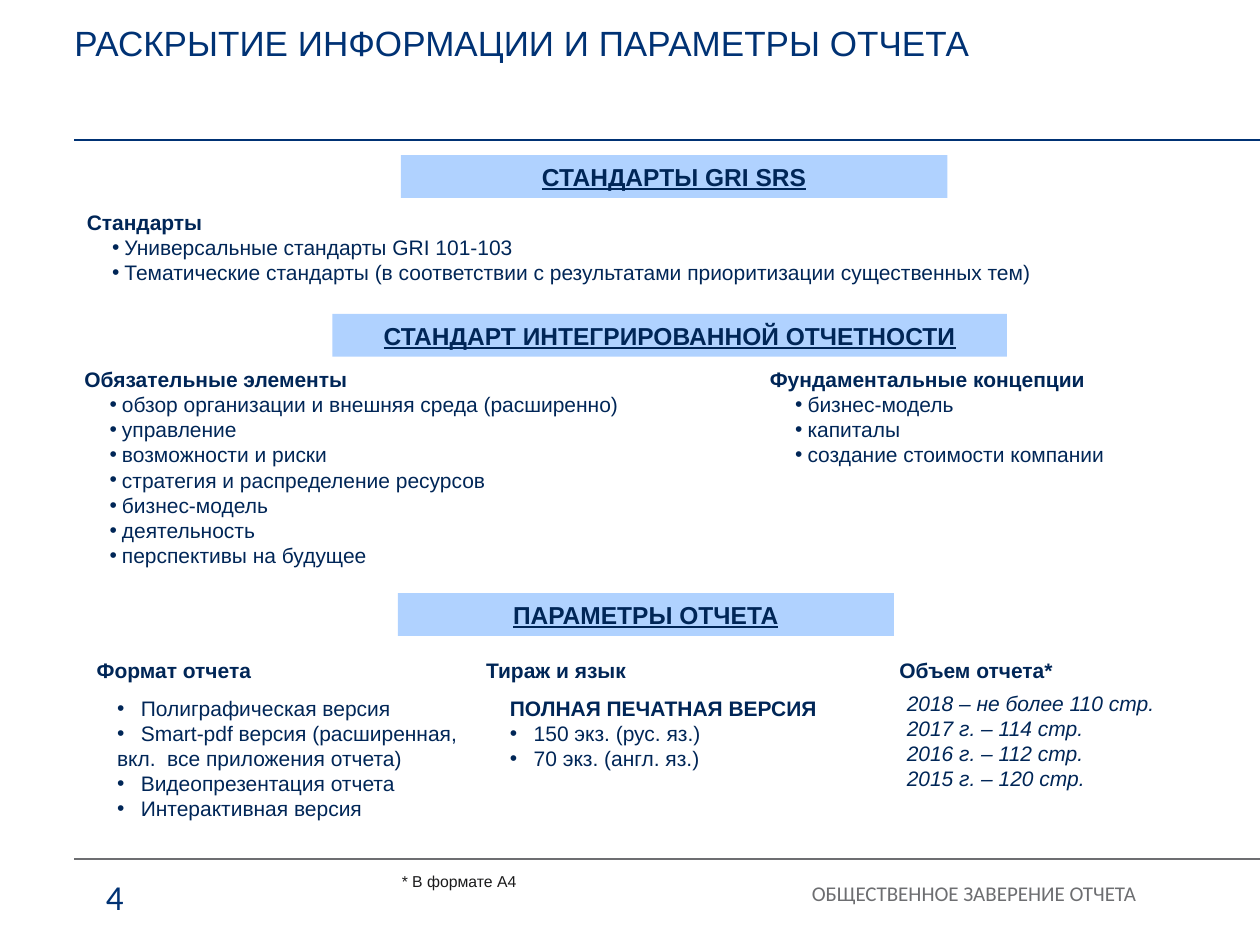
from lxml.etree import SubElement
from pptx import Presentation
from pptx.dml.color import RGBColor
from pptx.enum.shapes import MSO_CONNECTOR, MSO_SHAPE
from pptx.enum.text import MSO_ANCHOR, PP_ALIGN
from pptx.oxml.ns import qn
from pptx.util import Cm, Pt

THEME = {
    "navy": RGBColor.from_string("003274"),
    "ink": RGBColor.from_string("002657"),
    "gray": RGBColor.from_string("6D6E71"),
    "black": RGBColor.from_string("1B1B1C"),
    "band": RGBColor.from_string("B0D2FF"),
    "title": Pt(20),
    "heading": Pt(14),
    "body": Pt(12),
    "note": Pt(9),
}
BODY = {"name": "Arial", "size": THEME["body"]}
BOLD = {**BODY, "bold": True}
ITALIC = {**BODY, "italic": True}
HEADING = {**BOLD, "size": THEME["heading"], "underline": True}
TITLE = {"name": "Arial", "size": THEME["title"]}
PAGE = {"name": "Calibri", "size": THEME["title"]}
FOOTER = {"name": "Calibri", "size": THEME["body"]}
NOTE = {"name": "Arial", "size": THEME["note"]}
NARROW = (0.76, 0.25)
WIDE = (0.48, 0.48)


def write(paragraph, text, style, color="ink", align=PP_ALIGN.JUSTIFY, indent=None):
    paragraph.alignment = align
    if indent:
        margin, hanging = indent
        properties = paragraph._p.get_or_add_pPr()
        properties.set("marL", str(Cm(margin)))
        properties.set("indent", str(-Cm(hanging)))
        SubElement(properties, qn("a:buFont"), typeface="Arial")
        SubElement(properties, qn("a:buChar"), char="•")
    run = paragraph.add_run()
    run.text = text
    for attribute, value in style.items():
        setattr(run.font, attribute, value)
    run.font.color.rgb = THEME[color]


def text_area(left, top, width, height, insets=None):
    box = slide.shapes.add_textbox(Cm(left), Cm(top), Cm(width), Cm(height))
    frame = box.text_frame
    frame.word_wrap = True
    if insets:
        side, edge = insets
        frame.margin_left = frame.margin_right = Cm(side)
        frame.margin_top = frame.margin_bottom = Cm(edge)
    return frame


presentation = Presentation()
presentation.slide_width = Cm(25.4)
presentation.slide_height = Cm(19.05)
slide = presentation.slides.add_slide(presentation.slide_layouts[6])

for rule_top, color, weight in ((2.82, "navy", 1.5), (17.32, "gray", 1)):
    rule = slide.shapes.add_connector(
        MSO_CONNECTOR.STRAIGHT, Cm(1.5), Cm(rule_top), Cm(25.4), Cm(rule_top)
    )
    rule.line.color.rgb = THEME[color]
    rule.line.width = Pt(weight)
    SubElement(rule._element.spPr, qn("a:effectLst"))

title = text_area(1.5, 0.33, 22.86, 2.39, (0, 0.1))
write(title.paragraphs[0], "РАСКРЫТИЕ ИНФОРМАЦИИ И ПАРАМЕТРЫ ОТЧЕТА", TITLE, "navy", PP_ALIGN.LEFT)

sections = (
    ("СТАНДАРТЫ GRI SRS", 8.08, 3.13, 11.02),
    ("СТАНДАРТ ИНТЕГРИРОВАННОЙ ОТЧЕТНОСТИ", 6.7, 6.33, 13.6),
    ("ПАРАМЕТРЫ ОТЧЕТА", 8.02, 11.96, 10),
)
for heading, left, top, width in sections:
    band = slide.shapes.add_shape(
        MSO_SHAPE.RECTANGLE, Cm(left), Cm(top), Cm(width), Cm(0.86)
    )
    band.shadow.inherit = False
    band.fill.solid()
    band.fill.fore_color.rgb = THEME["band"]
    band.line.fill.background()
    band.text_frame.vertical_anchor = MSO_ANCHOR.MIDDLE
    write(band.text_frame.paragraphs[0], heading, HEADING, align=PP_ALIGN.CENTER)

standards = (
    ("Стандарты", BOLD, None),
    ("Универсальные стандарты GRI 101-103", BODY, NARROW),
    (
        "Тематические стандарты (в соответствии с результатами приоритизации существенных тем)",
        BODY,
        NARROW,
    ),
)
elements = (
    ("Обязательные элементы", BOLD, None),
    ("обзор организации и внешняя среда (расширенно)", BODY, NARROW),
    ("управление", BODY, NARROW),
    ("возможности и риски", BODY, NARROW),
    ("стратегия и распределение ресурсов", BODY, NARROW),
    ("бизнес-модель", BODY, NARROW),
    ("деятельность", BODY, NARROW),
    ("перспективы на будущее", BODY, NARROW),
)
concepts = (
    ("Фундаментальные концепции", BOLD, None),
    ("бизнес-модель", BODY, NARROW),
    ("капиталы", BODY, NARROW),
    ("создание стоимости компании", BODY, NARROW),
)
formats = (
    ("Полиграфическая версия", BODY, WIDE),
    ("Smart-pdf версия (расширенная,", BODY, WIDE),
    ("вкл.  все приложения отчета)", BODY, None),
    ("Видеопрезентация отчета", BODY, WIDE),
    ("Интерактивная версия", BODY, WIDE),
)
print_run = (
    ("ПОЛНАЯ ПЕЧАТНАЯ ВЕРСИЯ", BOLD, None),
    ("150 экз. (рус. яз.)", BODY, WIDE),
    ("70 экз. (англ. яз.)", BODY, WIDE),
)
volumes = (
    ("2018 – не более 110 стр.", ITALIC, None),
    ("2017 г. – 114 стр.", ITALIC, None),
    ("2016 г. – 112 стр.", ITALIC, None),
    ("2015 г. – 120 стр.", ITALIC, None),
)
blocks = (
    (standards, 1.5, 4.09, 22.86, 1.8),
    (elements, 1.45, 7.26, 11.38, 4.37),
    (concepts, 15.27, 7.26, 8.84, 2.31),
    ((("Формат отчета", BOLD, None),), 1.7, 13.13, 4, 0.76),
    ((("Тираж и язык", BOLD, None),), 9.55, 13.13, 4, 0.76),
    ((("Объем отчета*", BOLD, None),), 17.88, 13.13, 4, 0.76),
    (formats, 2.11, 13.89, 7.54, 2.82),
    (print_run, 10.03, 13.89, 6.88, 1.8),
    (volumes, 18.03, 13.79, 5.54, 2.31),
)
for lines, left, top, width, height in blocks:
    frame = text_area(left, top, width, height)
    for index, (text, style, indent) in enumerate(lines):
        paragraph = frame.add_paragraph() if index else frame.paragraphs[0]
        write(paragraph, text, style, indent=indent)

page_number = text_area(0.94, 17.53, 1.8, 0.99)
write(page_number.paragraphs[0], "4", PAGE, "navy", PP_ALIGN.RIGHT)

footnote = text_area(8.1, 17.53, 14.6, 1.32, (0, 0))
footnote.paragraphs[0].line_spacing = 1.1
write(footnote.paragraphs[0], "* В формате А4", NOTE, "black")

footer = text_area(8.51, 17.81, 14.4, 1.17, (0, 0))
footer.paragraphs[0].line_spacing = Pt(13)
write(footer.paragraphs[0], "ОБЩЕСТВЕННОЕ ЗАВЕРЕНИЕ ОТЧЕТА", FOOTER, "gray", PP_ALIGN.RIGHT)

presentation.save("out.pptx")
